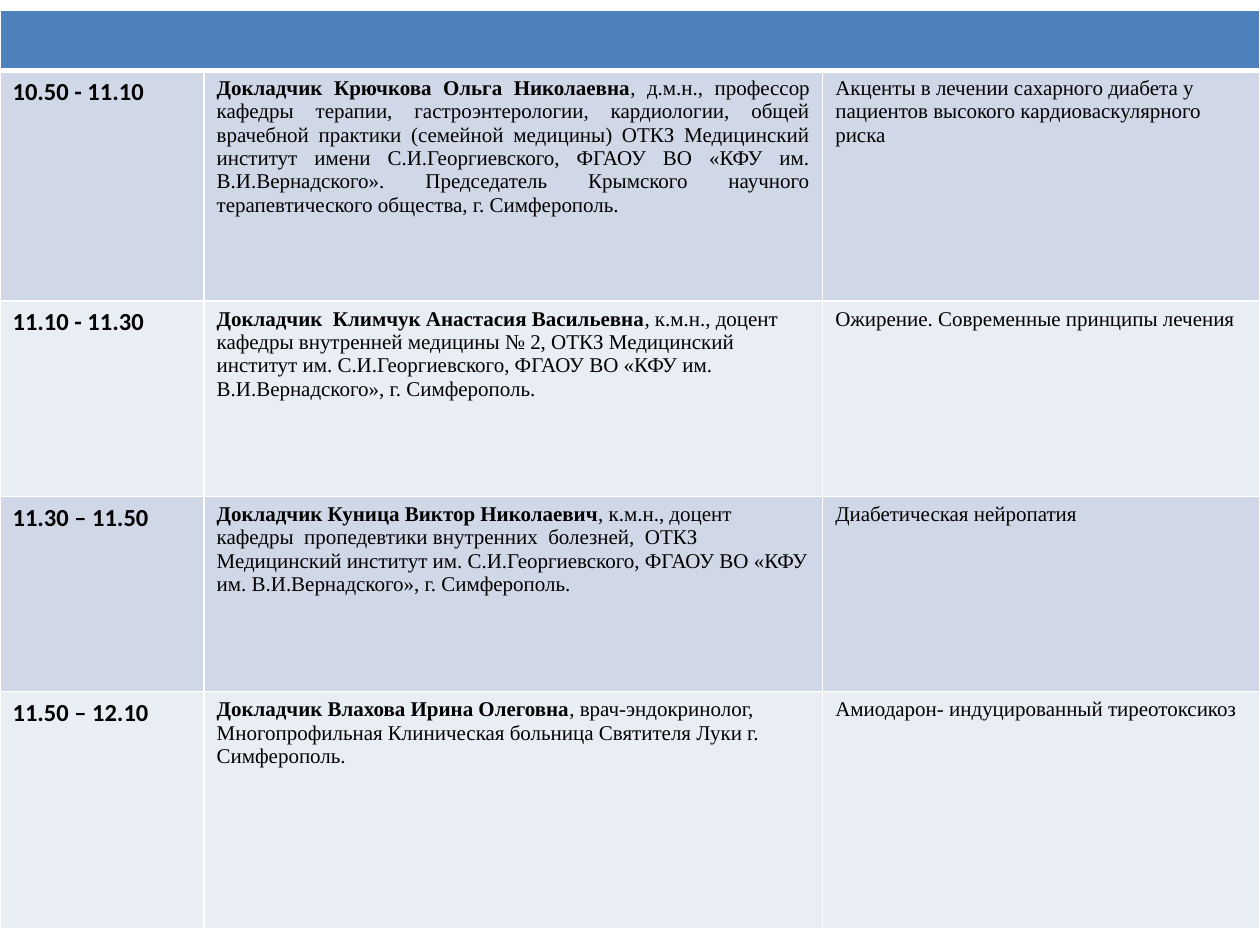
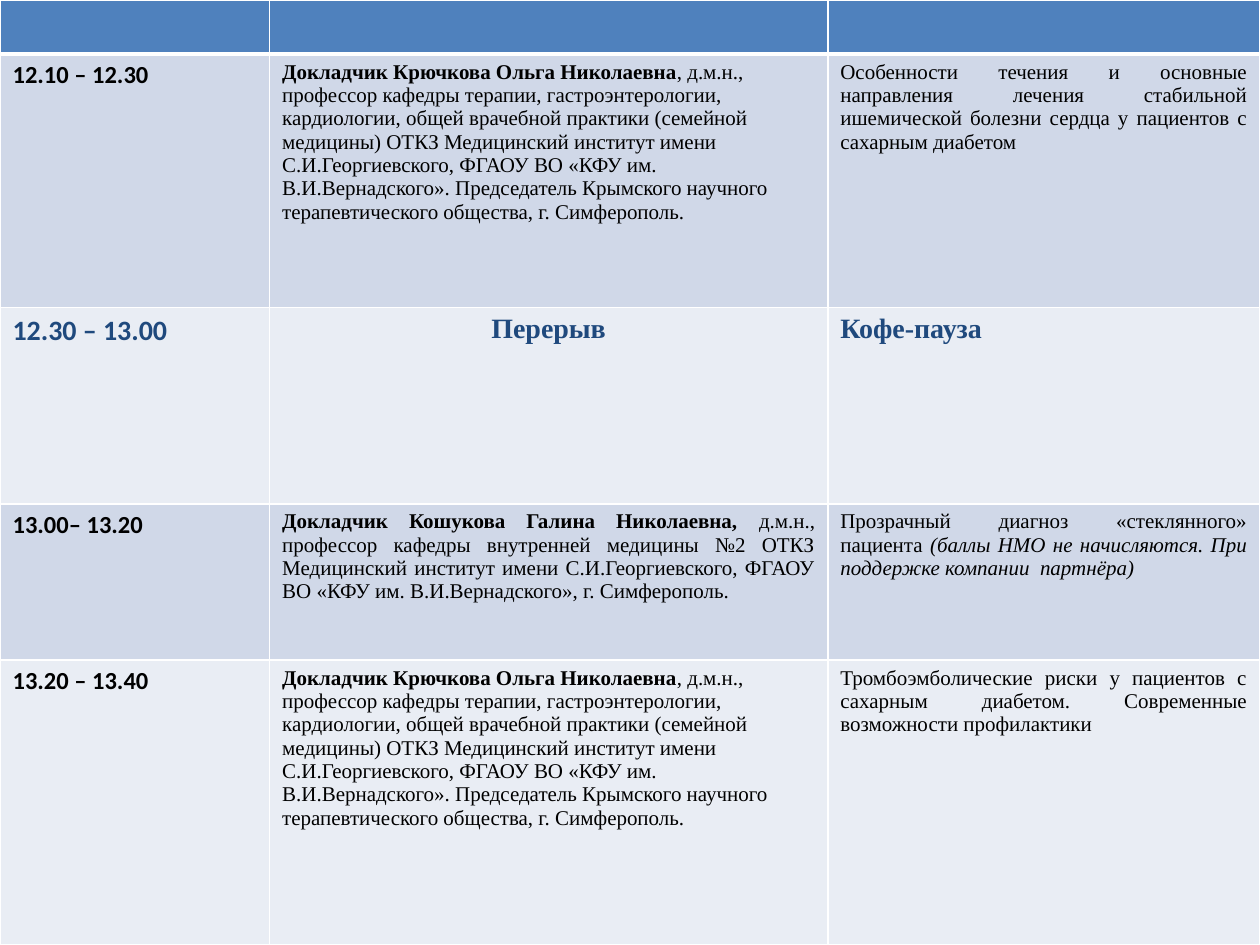
from dataclasses import dataclass

from lxml.etree import SubElement
from pptx import Presentation
from pptx.dml.color import RGBColor
from pptx.enum.text import PP_ALIGN as Align
from pptx.oxml.ns import qn
from pptx.util import Inches, Pt

HEADER_BLUE = RGBColor(0x4F, 0x81, 0xBD)
BANDS = (RGBColor(0xD0, 0xD8, 0xE8), RGBColor(0xE9, 0xED, 0xF4))
BLACK = RGBColor(0, 0, 0)
BREAK_BLUE = RGBColor(0x1F, 0x49, 0x7D)
WHITE = RGBColor(0xFF, 0xFF, 0xFF)

TIME_FONT = "Calibri"
BODY_FONT = "Times New Roman"

UNIVERSITY = "ФГАОУ ВО «КФУ им. В.И.Вернадского»"
KRYUCHKOVA = "Докладчик Крючкова Ольга Николаевна"
KRYUCHKOVA_POST = (
    ", д.м.н., профессор кафедры терапии, гастроэнтерологии, кардиологии, "
    "общей врачебной практики (семейной медицины) ОТКЗ Медицинский институт "
    f"имени С.И.Георгиевского, {UNIVERSITY}. Председатель Крымского научного "
    "терапевтического общества, г. Симферополь."
)


@dataclass
class Talk:
    """One row of the programme."""
    time: str
    speaker: str
    post: str
    topic: str
    note: str = ""
    align: Align = Align.LEFT
    is_break: bool = False


MORNING = (
    Talk("10.50 - 11.10", KRYUCHKOVA, KRYUCHKOVA_POST,
         "Акценты в лечении сахарного диабета у пациентов высокого "
         "кардиоваскулярного риска", align=Align.JUSTIFY),
    Talk("11.10 - 11.30", "Докладчик  Климчук Анастасия Васильевна",
         ", к.м.н., доцент кафедры внутренней медицины № 2, ОТКЗ Медицинский "
         f"институт им. С.И.Георгиевского, {UNIVERSITY}, г. Симферополь.",
         "Ожирение. Современные принципы лечения"),
    Talk("11.30 – 11.50", "Докладчик Куница Виктор Николаевич",
         ", к.м.н., доцент кафедры  пропедевтики внутренних  болезней,  ОТКЗ "
         f"Медицинский институт им. С.И.Георгиевского, {UNIVERSITY}, "
         "г. Симферополь.",
         "Диабетическая нейропатия"),
    Talk("11.50 – 12.10", "Докладчик Влахова Ирина Олеговна",
         ", врач-эндокринолог, Многопрофильная Клиническая больница "
         "Святителя Луки г. Симферополь.",
         "Амиодарон- индуцированный тиреотоксикоз"),
)

AFTERNOON = (
    Talk("12.10 – 12.30", KRYUCHKOVA, KRYUCHKOVA_POST,
         "Особенности течения и основные направления лечения стабильной "
         "ишемической болезни сердца у пациентов с сахарным диабетом"),
    Talk("12.30 – 13.00", "Перерыв", "", "Кофе-пауза",
         align=Align.CENTER, is_break=True),
    Talk("13.00– 13.20", "Докладчик Кошукова Галина Николаевна, ",
         "д.м.н., профессор кафедры внутренней медицины №2 ОТКЗ Медицинский "
         f"институт имени С.И.Георгиевского, {UNIVERSITY}, г. Симферополь.",
         "Прозрачный диагноз «стеклянного» пациента ",
         note="(баллы НМО не начисляются. При поддержке компании  партнёра)",
         align=Align.JUSTIFY),
    Talk("13.20 – 13.40", KRYUCHKOVA, KRYUCHKOVA_POST,
         "Тромбоэмболические риски у пациентов с сахарным диабетом. "
         "Современные возможности профилактики"),
)


def style_cell(cell, fill, bottom_width=1):
    """Fill a cell and draw its white borders."""
    properties = cell._tc.get_or_add_tcPr()
    for side in ("lnL", "lnR", "lnT", "lnB"):
        width = bottom_width if side == "lnB" else 1
        line = SubElement(properties, qn(f"a:{side}"), w=str(Pt(width)))
        solid = SubElement(line, qn("a:solidFill"))
        SubElement(solid, qn("a:srgbClr"), val=str(WHITE))
    cell.fill.solid()
    cell.fill.fore_color.rgb = fill


def write_cell(cell, runs, font_name, size, color, align=Align.LEFT):
    """Write (text, bold, italic) runs as one paragraph."""
    paragraph = cell.text_frame.paragraphs[0]
    paragraph.alignment = align
    paragraph.font.name = font_name
    paragraph.font.size = Pt(size)
    paragraph.font.color.rgb = color
    for text, bold, italic in runs:
        if text:
            run = paragraph.add_run()
            run.text = text
            run.font.bold = bold
            run.font.italic = italic


def write_talk(cells, talk, topic_align):
    """Write the time, speaker and topic of one talk."""
    time_cell, speaker_cell, topic_cell = cells
    color = BREAK_BLUE if talk.is_break else BLACK
    time_size, body_size = (16, 16) if talk.is_break else (14, 12)
    write_cell(time_cell, [(talk.time, True, False)], TIME_FONT, time_size, color)
    write_cell(speaker_cell,
               [(talk.speaker, True, False), (talk.post, False, False)],
               BODY_FONT, body_size, color, talk.align)
    write_cell(topic_cell,
               [(talk.topic, talk.is_break, False), (talk.note, False, True)],
               BODY_FONT, body_size, color, topic_align)


def add_programme(slide, top, widths, heights, talks, topic_align):
    """Add a programme table with a header band and return it."""
    frame = slide.shapes.add_table(
        len(heights), len(widths), Inches(0), Inches(top),
        Inches(sum(widths)), Inches(sum(heights)))
    table = frame.table
    for column, width in zip(table.columns, widths):
        column.width = Inches(width)
    for row, height in zip(table.rows, heights):
        row.height = Inches(height)
    header, *body = table.rows
    for cell in header.cells:
        style_cell(cell, HEADER_BLUE, bottom_width=3)
    for index, (row, talk) in enumerate(zip(body, talks)):
        for cell in row.cells:
            style_cell(cell, BANDS[index % 2])
        write_talk(row.cells, talk, topic_align)
    return table


def main():
    """Build both programme slides."""
    presentation = Presentation()
    presentation.slide_width = Inches(10)
    presentation.slide_height = Inches(7.5)
    blank = presentation.slide_layouts[6]

    morning = add_programme(
        presentation.slides.add_slide(blank), 0.08, (1.62, 4.91, 3.47),
        (0.48, 1.83, 1.55, 1.55, 1.88), MORNING, Align.LEFT)
    morning.cell(0, 0).merge(morning.cell(0, 2))

    add_programme(
        presentation.slides.add_slide(blank), 0, (2.14, 4.43, 3.43),
        (0.43, 2.01, 1.56, 1.24, 2.26), AFTERNOON, Align.JUSTIFY)

    presentation.save("out.pptx")


if __name__ == "__main__":
    main()
